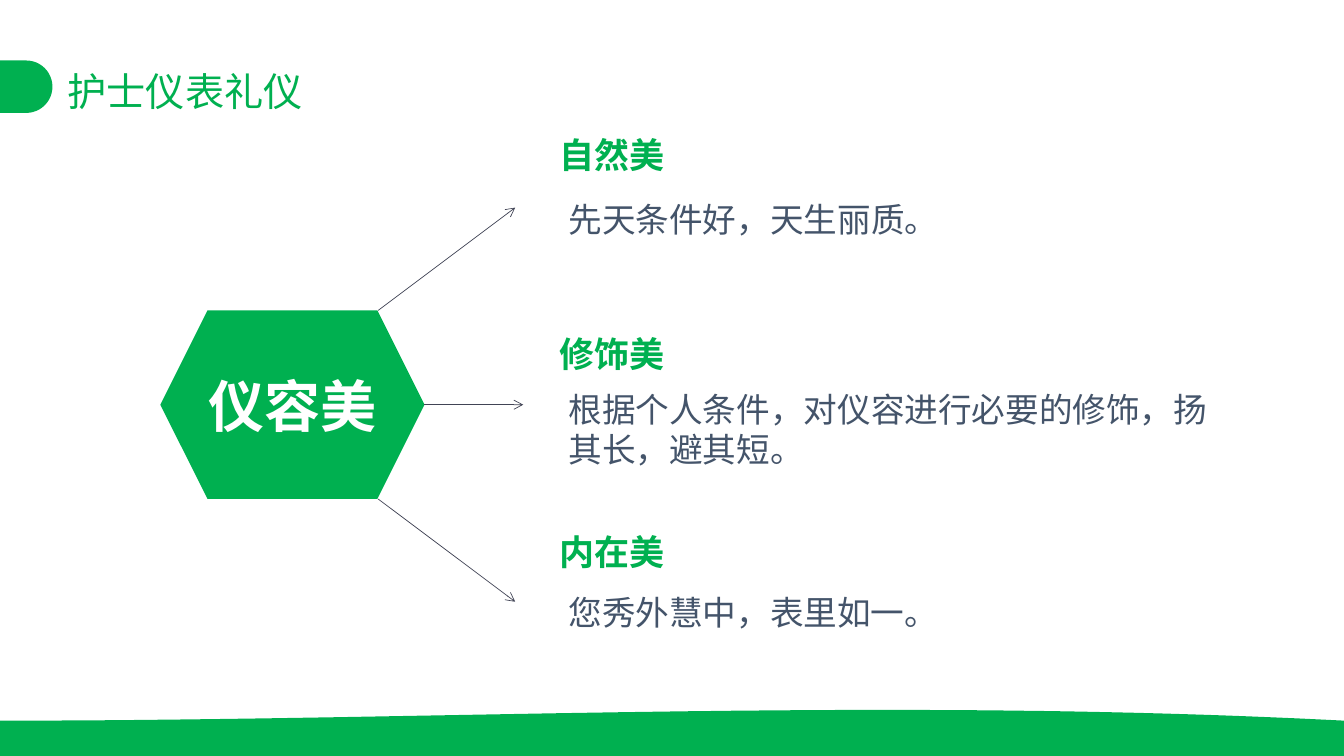
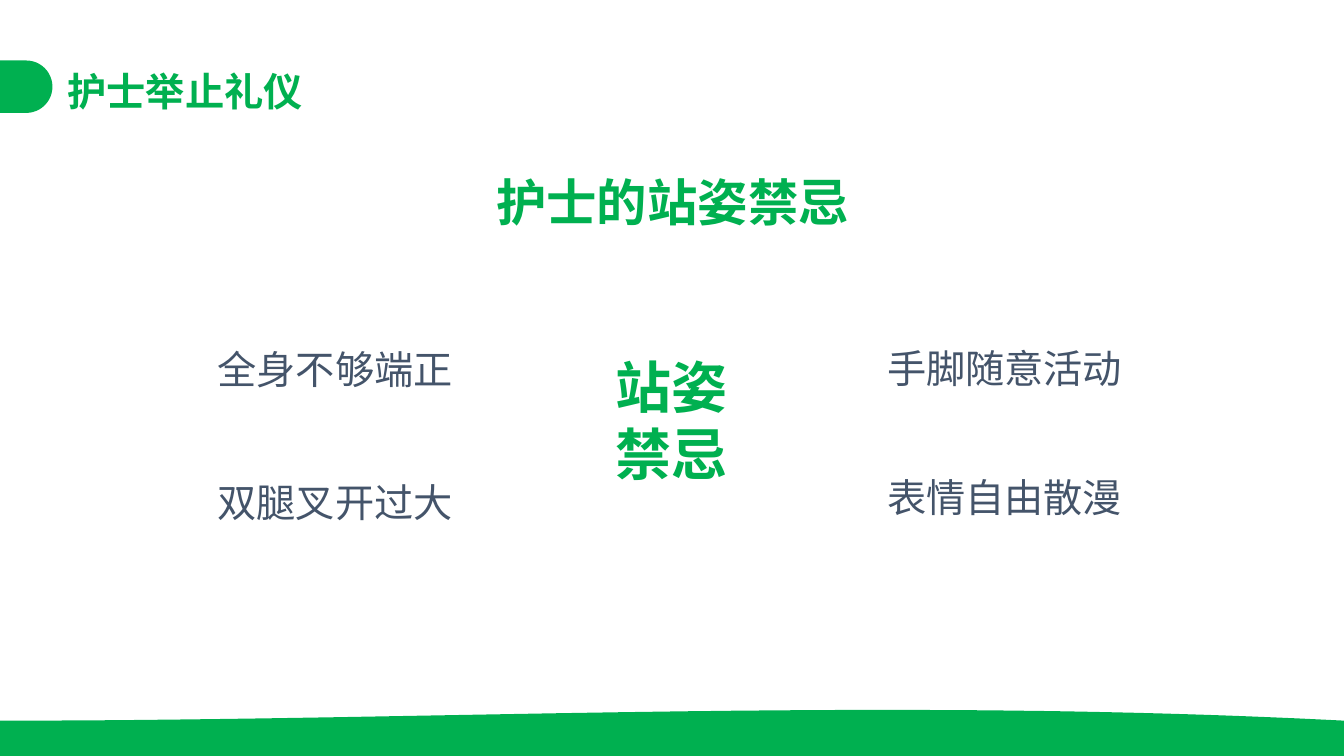
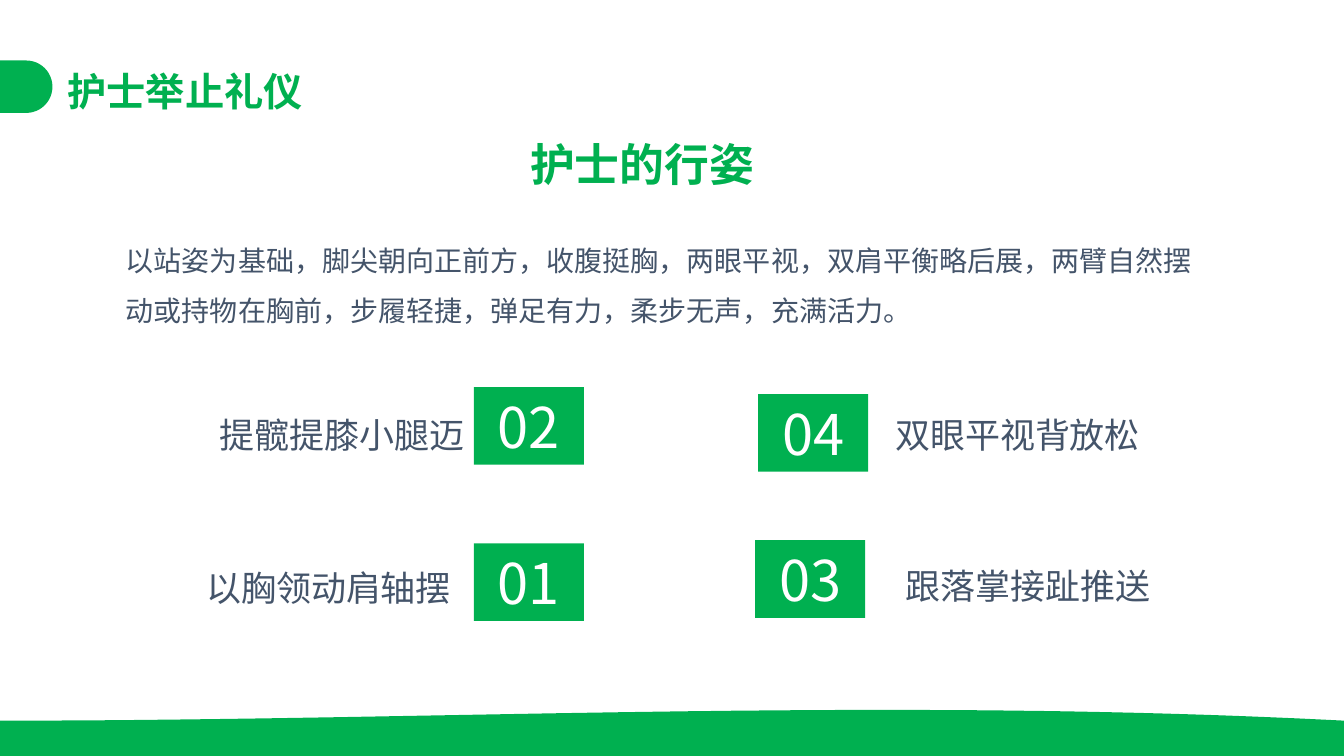
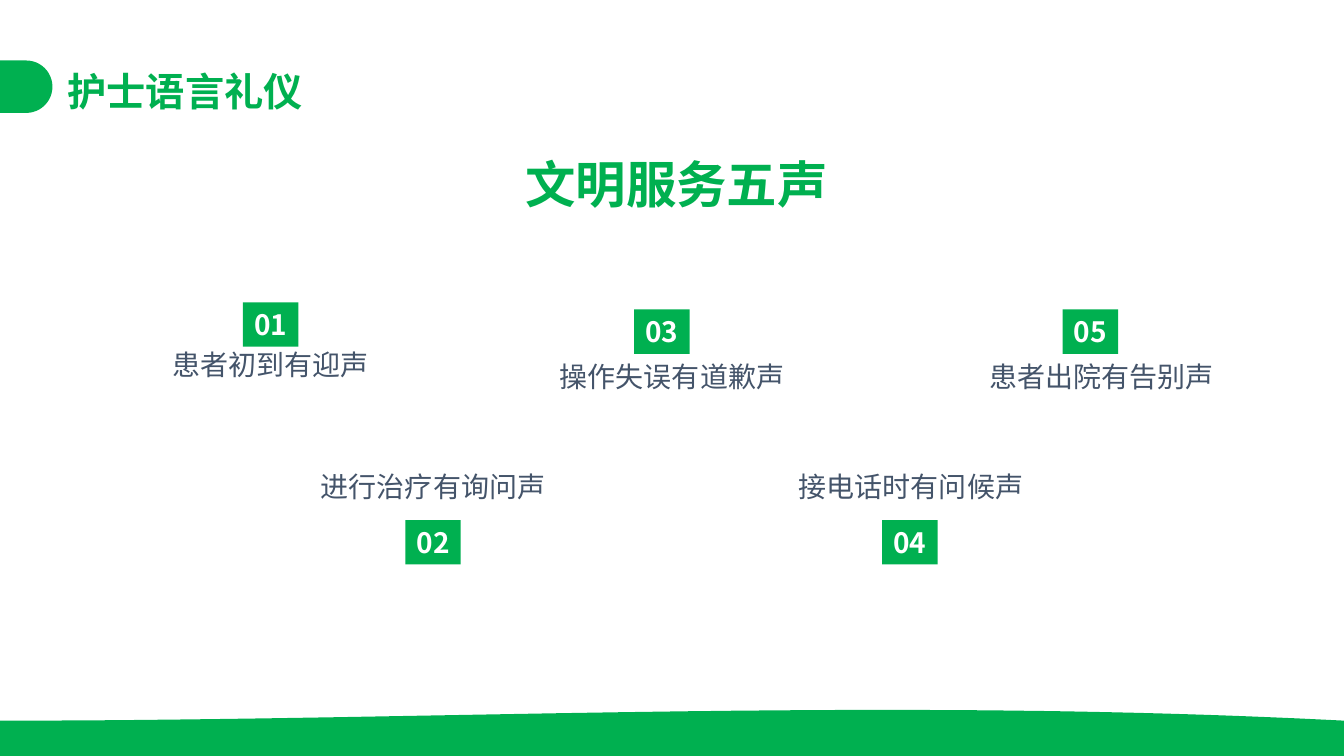
from lxml import etree
from pptx import Presentation
from pptx import util as u
from pptx.dml import color
from pptx.enum import shapes, text
from pptx.oxml import ns

PX = 9144
WIDE, HIGH = 1333, 750
FONT = "Noto Sans CJK SC"
HUES = {"green": "00B050", "slate": "44546A", "ink": "414455", "white": "FFFFFF"}
LEFT, MID, RIGHT = text.PP_ALIGN.LEFT, text.PP_ALIGN.CENTER, text.PP_ALIGN.RIGHT
TOP, HALF = text.MSO_ANCHOR.TOP, text.MSO_ANCHOR.MIDDLE
KIND = shapes.MSO_SHAPE


def px(*nums):
    return [u.Emu(round(n * PX)) for n in nums]


def hue(name):
    return color.RGBColor.from_string(HUES[name])


def write(shape, words, size, ink, bold=False, align=LEFT, anchor=TOP,
          grow=True, wrap=True, space=None, pads=(10, 5)):
    frame = shape.text_frame
    frame.text = words
    frame.word_wrap = wrap
    frame.vertical_anchor = anchor
    fit = text.MSO_AUTO_SIZE
    frame.auto_size = fit.SHAPE_TO_FIT_TEXT if grow else fit.NONE
    frame.margin_left = frame.margin_right = px(pads[0])[0]
    frame.margin_top = frame.margin_bottom = px(pads[1])[0]
    for para in frame.paragraphs:
        para.alignment = align
        para.line_spacing = space
        for run in para.runs:
            font = run.font
            font.size, font.bold, font.name = u.Pt(size), bold, FONT
            font.color.rgb = hue(ink)
            props = run._r.get_or_add_rPr()
            etree.SubElement(props, ns.qn("a:ea")).set("typeface", FONT)


def label(slide, box, words, size, ink="slate", **style):
    write(slide.shapes.add_textbox(*px(*box)), words, size, ink, **style)


def paint(shape):
    shape.shadow.inherit = False
    shape.fill.solid()
    shape.fill.fore_color.rgb = hue("green")
    shape.line.fill.background()
    return shape


def block(slide, kind, box):
    return paint(slide.shapes.add_shape(kind, *px(*box)))


def tile(slide, box, words, size, **style):
    write(block(slide, KIND.RECTANGLE, box), words, size, "white", align=MID, **style)


def arrow(slide, start, end):
    line = slide.shapes.add_connector(
        shapes.MSO_CONNECTOR.STRAIGHT, *px(*start, *end))
    line.line.color.rgb = hue("ink")
    line.line.width = u.Pt(0.5)
    tail = etree.SubElement(line.line._get_or_add_ln(), ns.qn("a:tailEnd"))
    tail.set("type", "arrow")
    etree.SubElement(line._element.spPr, ns.qn("a:effectLst"))


def curve(knots, steps=60):
    a, b, c, d = knots
    for i in range(steps + 1):
        t = i / steps
        s = 1 - t
        yield tuple(s**3 * p + 3 * s * s * t * q + 3 * s * t * t * r + t**3 * e
                    for p, q, r, e in zip(a, b, c, d))


def band(slide, top, rise):
    edge = curve([(WIDE, top), (867, top - rise), (444, top), (0, top)])
    first, *rest = [px(*dot) for dot in [*edge, (0, HIGH), (WIDE, HIGH)]]
    form = slide.shapes.build_freeform(*first, scale=1)
    form.add_line_segments(rest, close=True)
    paint(form.convert_to_shape())


def page(deck, title, bold=True):
    slide = deck.slides.add_slide(deck.slide_layouts[5])
    band(slide, 715, 24)
    block(slide, KIND.FLOWCHART_DELAY, (0, 60, 52, 52))
    head = slide.shapes.title
    head.left, head.top, head.width, head.height = px(52, 53, 304, 75)
    write(head, title, 28, "green", bold=bold, anchor=HALF, grow=False, pads=(15, 7))
    return slide


def topic(slide, x, y, words, size):
    label(slide, (x, y, 578, 71), words, size, "green", bold=True, align=MID)


def hub(slide, box, words):
    x, y, w, h = box
    write(block(slide, KIND.HEXAGON, box), words, 40, "white", bold=True,
          align=MID, anchor=HALF, grow=False)
    side = x + w - h // 4
    arrow(slide, (side, y), (side + 136, y - 102))
    arrow(slide, (x + w, y + h / 2), (x + w + 98, y + h / 2))
    arrow(slide, (side, y + h), (side + 136, y + h + 102))


def points(slide, x, y, step, rows):
    for i, (name, words, drop, wide, space) in enumerate(rows):
        top = y + i * step
        label(slide, (x, top, 177, 51), name, 25, "green", bold=True,
              anchor=HALF, grow=False)
        label(slide, (x + 9, top + drop, wide, 64), words, 24, space=space)


def beauty(deck):
    slide = page(deck, "护士仪表礼仪", bold=False)
    hub(slide, (159, 308, 262, 187), "仪容美")
    points(slide, 545, 128, 197, [
        ("自然美", "先天条件好，天生丽质。", 44, 415, 1.5),
        ("修饰美", "根据个人条件，对仪容进行必要的修饰，扬其长，避其短。", 56, 662, None),
        ("内在美", "您秀外慧中，表里如一。", 40, 400, 1.5)])


def stance(deck):
    slide = page(deck, "护士举止礼仪")
    topic(slide, 378, 165, "护士的站姿禁忌", 36)
    label(slide, (600, 345, 132, 145), "站姿\n禁忌", 40, "green",
          bold=True, align=MID, wrap=False)
    for x, y, words in [(206, 338, "全身不够端正"), (206, 470, "双腿叉开过大"),
                        (870, 337, "手脚随意活动"), (870, 465, "表情自由散漫")]:
        label(slide, (x, y, 256, 57), words, 28, wrap=False)


def stride(deck):
    slide = page(deck, "护士举止礼仪")
    topic(slide, 348, 131, "护士的行姿", 32)
    label(slide, (115, 220, 1103, 105),
          "以站姿为基础，脚尖朝向正前方，收腹挺胸，两眼平视，双肩平衡略后展，"
          "两臂自然摆动或持物在胸前，步履轻捷，弹足有力，柔步无声，充满活力。",
          20, space=1.5)
    wide = 358
    for num, x, y, dx, dy, words, side in [
            ("01", 470, 539, -13 - wide, 12, "以胸领动肩轴摆", RIGHT),
            ("02", 470, 384, -wide, 16, "提髋提膝小腿迈", RIGHT),
            ("03", 749, 536, 139, 13, "跟落掌接趾推送", LEFT),
            ("04", 752, 391, 126, 9, "双眼平视背放松", LEFT)]:
        tile(slide, (x, y, 109, 77), num, 40)
        label(slide, (x + dx, y + dy, wide, 54), words, 25, align=side, space=1.14)


def voices(deck):
    slide = page(deck, "护士语言礼仪")
    topic(slide, 382, 147, "文明服务五声", 36)
    rows = [(241, 300, -127, 40, "患者初到有迎声"),
            (402, 516, -127, -55, "进行治疗有询问声"),
            (629, 307, -117, 45, "操作失误有道歉声"),
            (875, 516, -126, -55, "接电话时有问候声"),
            (1054, 307, -116, 45, "患者出院有告别声")]
    for i, (x, y, dx, dy, words) in enumerate(rows, 1):
        tile(slide, (x, y, 55, 44), f"{i:02}", 20, bold=True, wrap=False)
        label(slide, (x + dx, y + dy, 309, 44), words, 20, align=MID)


def main():
    deck = Presentation()
    deck.slide_width, deck.slide_height = px(WIDE, HIGH)
    for make in (beauty, stance, stride, voices):
        make(deck)
    deck.save("out.pptx")


if __name__ == "__main__":
    main()
